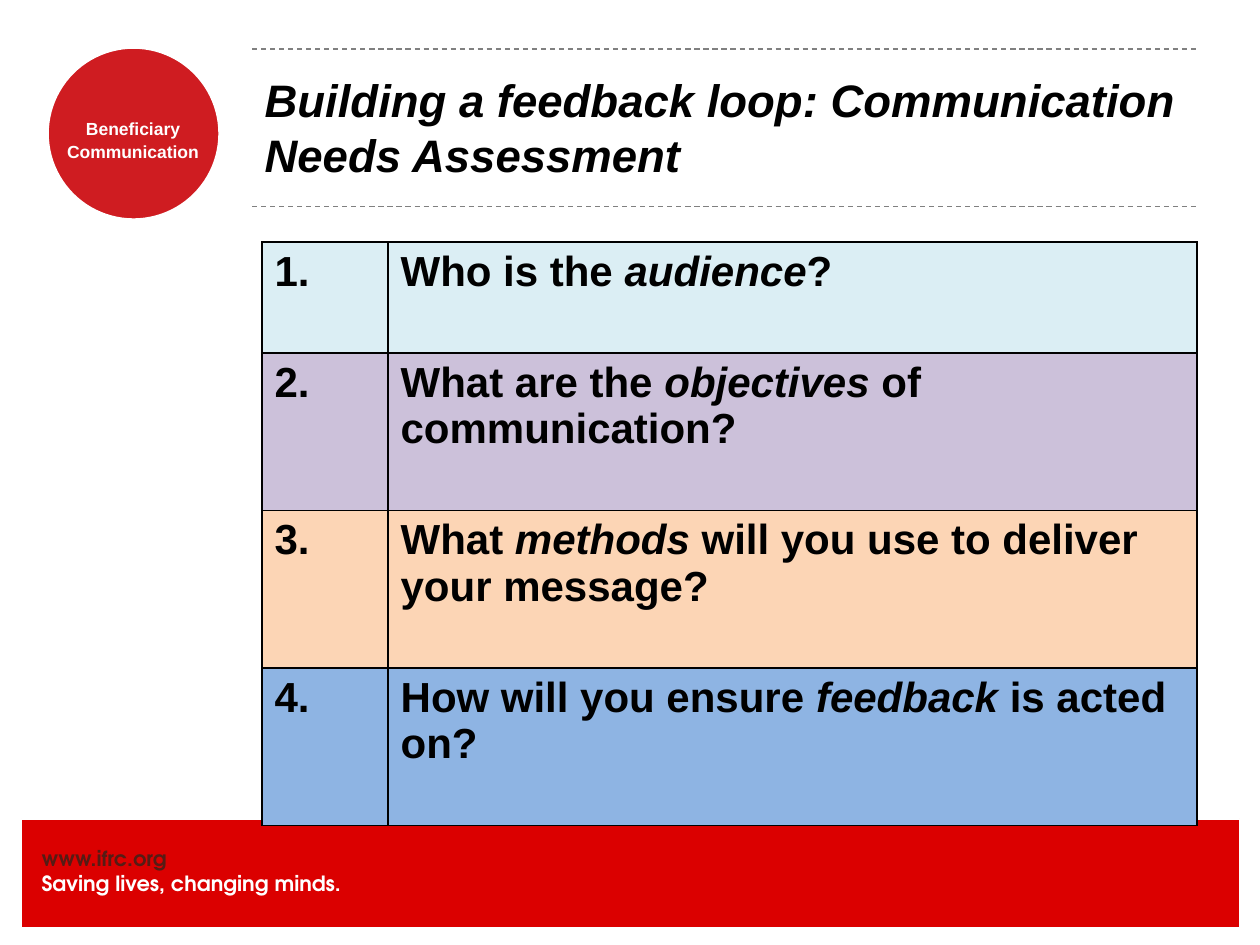
from dataclasses import dataclass

from lxml import etree
from pptx import Presentation
from pptx.dml.color import RGBColor
from pptx.enum.dml import MSO_LINE
from pptx.enum.shapes import MSO_CONNECTOR, MSO_SHAPE
from pptx.enum.text import MSO_ANCHOR, PP_ALIGN
from pptx.oxml.ns import qn
from pptx.util import Inches, Pt

DASH = MSO_LINE.DASH
STRAIGHT = MSO_CONNECTOR.STRAIGHT
OVAL, RECTANGLE = MSO_SHAPE.OVAL, MSO_SHAPE.RECTANGLE
MIDDLE = MSO_ANCHOR.MIDDLE
LEFT, CENTER = PP_ALIGN.LEFT, PP_ALIGN.CENTER
BLACK, WHITE, GREY = "000000", "FFFFFF", "808080"
BODY_FONT, FOOTER_FONT = "Arial", "TeX Gyre Adventor"
RULE_LEFT, RULE_RIGHT = 2, 9.5
TITLE_ONLY_LAYOUT = 5


@dataclass
class Question:
    before: str
    keyword: str
    after: str
    fill: str
    height: float


QUESTIONS = [
    Question("Who is the ", "audience", "?", "DBEEF4", 0.88),
    Question("What are the ", "objectives", " of communication?", "CCC1DA", 1.25),
    Question("What ", "methods", " will you use to deliver your message?",
             "FCD5B5", 1.25),
    Question("How will you ensure ", "feedback", " is acted on?", "8EB4E3", 1.25),
]


def rgb(value: str) -> RGBColor:
    return RGBColor.from_string(value)


def add_bold_run(paragraph, text: str, size: float, color: str = BLACK,
                 font: str = BODY_FONT, italic: bool = False) -> None:
    run = paragraph.add_run()
    run.text = text
    run.font.name = font
    run.font.size = Pt(size)
    run.font.bold = True
    run.font.italic = italic
    run.font.color.rgb = rgb(color)


def add_panel(slide, preset, left: float, top: float, width: float,
              height: float, fill: str, line_width: float) -> None:
    panel = slide.shapes.add_shape(preset, Inches(left), Inches(top),
                                   Inches(width), Inches(height))
    panel.shadow.inherit = False
    panel.fill.solid()
    panel.fill.fore_color.rgb = rgb(fill)
    panel.line.color.rgb = rgb(WHITE)
    panel.line.width = Pt(line_width)


def add_text_frame(slide, left: float, top: float, width: float, height: float):
    """Add a wrapping text box without insets and return its text frame."""
    box = slide.shapes.add_textbox(Inches(left), Inches(top),
                                   Inches(width), Inches(height))
    frame = box.text_frame
    frame.word_wrap = True
    frame.margin_left = frame.margin_right = 0
    frame.margin_top = frame.margin_bottom = 0
    return frame


def add_dashed_rule(slide, y: float) -> None:
    rule = slide.shapes.add_connector(STRAIGHT, Inches(RULE_LEFT), Inches(y),
                                      Inches(RULE_RIGHT), Inches(y))
    rule.line.color.rgb = rgb(GREY)
    rule.line.width = Pt(0.75)
    rule.line.dash_style = DASH
    etree.SubElement(rule._element.spPr, qn("a:effectLst"))


def style_cell(cell, fill: str) -> None:
    """Give the cell a thin black border on every side and a plain fill."""
    properties = cell._tc.get_or_add_tcPr()
    for side in ("a:lnL", "a:lnR", "a:lnT", "a:lnB"):
        border = etree.SubElement(properties, qn(side), w=str(Pt(1)))
        solid = etree.SubElement(border, qn("a:solidFill"))
        etree.SubElement(solid, qn("a:srgbClr"), val=BLACK)
    cell.fill.solid()
    cell.fill.fore_color.rgb = rgb(fill)


def add_footer(slide) -> None:
    add_panel(slide, RECTANGLE, 0.17, 6.5, 9.67, 0.86, "DB0000", 0.75)
    footer = add_text_frame(slide, 0.33, 6.71, 3.42, 0.4)
    add_bold_run(footer.paragraphs[0], "www.ifrc.org", 12, "551C15", FOOTER_FONT)
    add_bold_run(footer.add_paragraph(), "Saving lives, changing minds.", 12,
                 WHITE, FOOTER_FONT)


def add_badge(slide) -> None:
    add_panel(slide, OVAL, 0.37, 0.37, 1.38, 1.38, "CF1C21", 2.5)
    label = add_text_frame(slide, 0.43, 0.92, 1.25, 0.34).paragraphs[0]
    label.alignment = CENTER
    label.line_spacing = 1.1
    add_bold_run(label, "Beneficiary Communication", 10, WHITE)


def set_title(slide) -> None:
    title = slide.shapes.title
    title.left, title.top = Inches(RULE_LEFT), Inches(0.38)
    title.width, title.height = Inches(RULE_RIGHT - RULE_LEFT), Inches(1.25)
    title.text_frame.vertical_anchor = MIDDLE
    heading = title.text_frame.paragraphs[0]
    heading.alignment = LEFT
    add_bold_run(heading, "Building a feedback loop: Communication Needs Assessment",
                 26, italic=True)


def add_question_table(slide, questions: list[Question]) -> None:
    total_height = sum(question.height for question in questions)
    table = slide.shapes.add_table(len(questions), 2, Inches(2.08), Inches(1.92),
                                   Inches(7.42), Inches(total_height)).table
    table.first_row = table.horz_banding = False
    table.columns[0].width, table.columns[1].width = Inches(1), Inches(6.42)
    for index, question in enumerate(questions):
        table.rows[index].height = Inches(question.height)
        number_cell, question_cell = table.cell(index, 0), table.cell(index, 1)
        style_cell(number_cell, question.fill)
        style_cell(question_cell, question.fill)

        number = number_cell.text_frame.paragraphs[0]
        indent = Inches(0.38)
        number_properties = number._p.get_or_add_pPr()
        number_properties.set("marL", str(indent))
        number_properties.set("indent", str(-indent))
        add_bold_run(number, f"{index + 1}.", 24)

        wording = question_cell.text_frame.paragraphs[0]
        add_bold_run(wording, question.before, 24)
        add_bold_run(wording, question.keyword, 24, italic=True)
        add_bold_run(wording, question.after, 24)


def main() -> None:
    presentation = Presentation()
    presentation.slide_width, presentation.slide_height = Inches(10), Inches(7.5)
    layout = presentation.slide_layouts[TITLE_ONLY_LAYOUT]
    slide = presentation.slides.add_slide(layout)
    add_footer(slide)
    add_badge(slide)
    for y in (0.39, 1.64):
        add_dashed_rule(slide, y)
    set_title(slide)
    add_question_table(slide, QUESTIONS)
    presentation.save("out.pptx")


if __name__ == "__main__":
    main()
